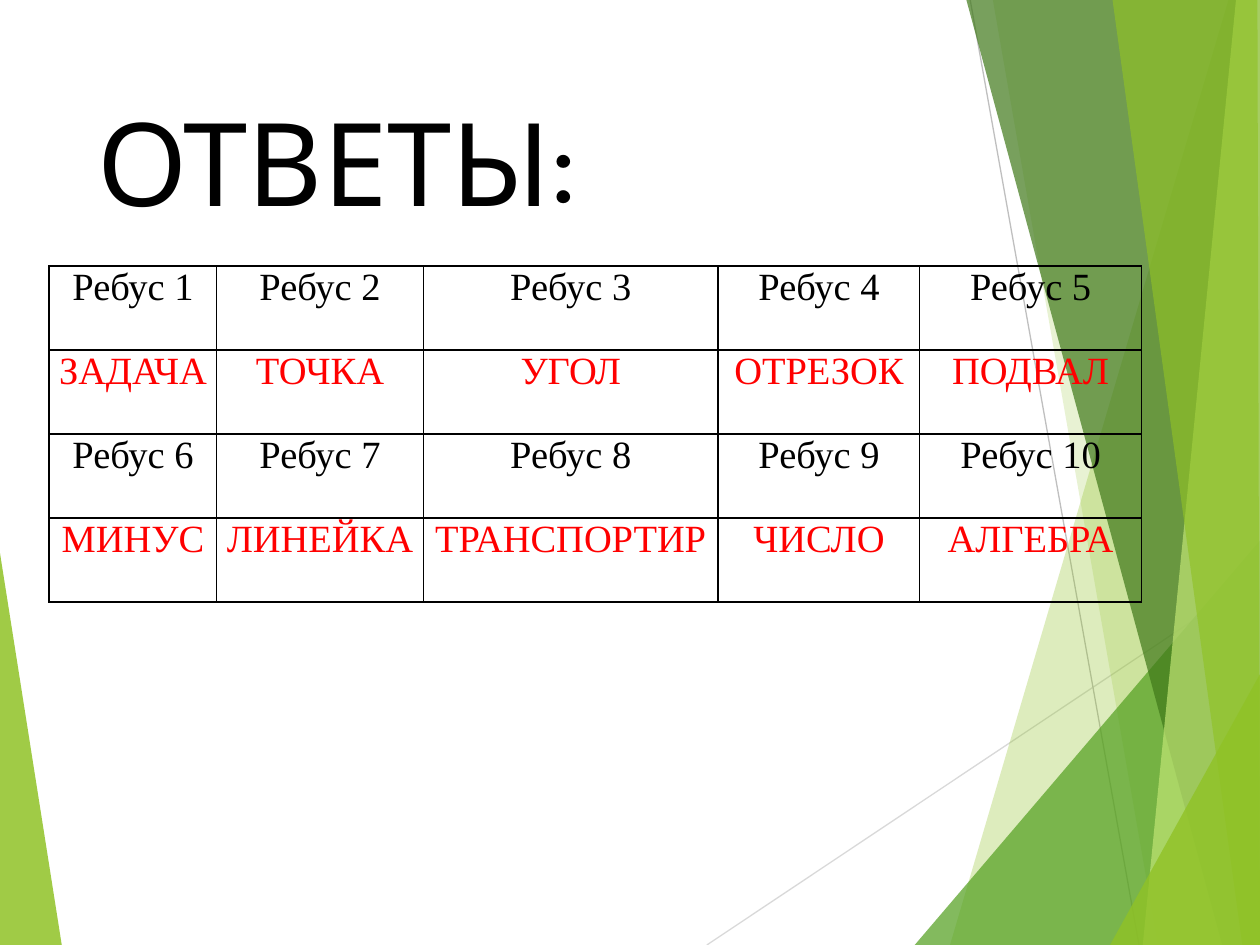
import lxml.etree
import pptx
import pptx.dml.color
import pptx.enum.shapes
import pptx.enum.text
import pptx.oxml.ns
import pptx.util

RGBColor = pptx.dml.color.RGBColor
qn = pptx.oxml.ns.qn
PP_ALIGN = pptx.enum.text.PP_ALIGN
MSO_ANCHOR = pptx.enum.text.MSO_ANCHOR

BLACK = RGBColor(0x00, 0x00, 0x00)
RED = RGBColor(0xFF, 0x00, 0x00)
LIME = RGBColor(0x90, 0xC2, 0x26)
GREEN = RGBColor(0x54, 0xA0, 0x21)
FOREST = RGBColor(0x3F, 0x78, 0x19)
PALE_LIME = RGBColor(0xC0, 0xE4, 0x74)
LIGHT_GREY = RGBColor(0xD9, 0xD9, 0xD9)
GREY = RGBColor(0xBF, 0xBF, 0xBF)

COLS, ROWS = 100, 75

RAYS = [
    ((56.1, 75), (100, 45.7), LIGHT_GREY),
    ((77, 0), (90.4, 75), GREY),
]
FACETS = [
    ([(0, 43.9), (4.9, 75), (0, 75)], LIME, 85),
    ([(97.5, 0), (75.4, 75), (100, 75), (100, 0)], LIME, 30),
    ([(78.8, 0), (91.9, 75), (100, 75), (100, 0)], LIME, 20),
    ([(72.6, 75), (100, 42.9), (100, 75)], GREEN, 72),
    ([(76.7, 0), (97, 75), (100, 75), (100, 0)], FOREST, 70),
    ([(98.1, 0), (90.7, 75), (100, 75), (100, 0)], PALE_LIME, 70),
    ([(88.3, 0), (98.6, 75), (100, 75), (99.8, 0)], LIME, 65),
    ([(88.1, 75), (100, 53.5), (100, 75)], LIME, 80),
]
ANSWERS = [
    ["ЗАДАЧА", "ТОЧКА", "УГОЛ", "ОТРЕЗОК", "ПОДВАЛ"],
    ["МИНУС", "ЛИНЕЙКА", "ТРАНСПОРТИР", "ЧИСЛО", "АЛГЕБРА"],
]


class Deck:
    title_font = {"name": "Karla", "size": pptx.util.Pt(66)}
    cell_font = {"name": "Times New Roman", "size": pptx.util.Pt(22)}
    cell_format = {
        "margin_left": pptx.util.Inches(0.07),
        "margin_right": pptx.util.Inches(0.07),
        "margin_top": 0,
        "margin_bottom": 0,
        "vertical_anchor": MSO_ANCHOR.TOP,
    }

    def __init__(self):
        self.prs = pptx.Presentation()
        self.prs.slide_width = pptx.util.Inches(10)
        self.prs.slide_height = pptx.util.Inches(7.5)
        self.s = self.prs.slides.add_slide(self.prs.slide_layouts[5])

    def x(self, col):
        return round(self.prs.slide_width * col / COLS)

    def y(self, row):
        return round(self.prs.slide_height * row / ROWS)

    def apply(self, obj, values):
        for key, value in values.items():
            setattr(obj, key, value)

    def text(self, p, text, font, color, align):
        r = p.add_run()
        r.text = text
        p.alignment = align
        self.apply(r.font, font)
        r.font.color.rgb = color

    def ray(self, start, end, color):
        sp = self.s.shapes.add_connector(
            pptx.enum.shapes.MSO_CONNECTOR.STRAIGHT,
            self.x(start[0]), self.y(start[1]), self.x(end[0]), self.y(end[1]))
        sp.line.color.rgb = color
        sp.line.width = pptx.util.Pt(0.75)
        lxml.etree.SubElement(sp._element.spPr, qn("a:effectLst"))

    def facet(self, points, color, opacity):
        pts = [(self.x(col), self.y(row)) for col, row in points]
        fb = self.s.shapes.build_freeform(*pts[0], scale=1.0)
        fb.add_line_segments(pts[1:], close=True)
        sp = fb.convert_to_shape()
        sp.shadow.inherit = False
        sp.fill.solid()
        sp.fill.fore_color.rgb = color
        sp.line.fill.background()
        clr = sp._element.spPr.find(qn("a:solidFill"))[0]
        lxml.etree.SubElement(clr, qn("a:alpha"), val=str(opacity * 1000))

    def title(self, text, left, top, width, height):
        sp = self.s.shapes.title
        self.apply(sp, {"left": self.x(left), "top": self.y(top),
                        "width": self.x(width), "height": self.y(height)})
        tf = sp.text_frame
        self.apply(tf, {"vertical_anchor": MSO_ANCHOR.TOP, "word_wrap": True,
                        "auto_size": pptx.enum.text.MSO_AUTO_SIZE.NONE})
        self.text(tf.paragraphs[0], text, self.title_font, BLACK, PP_ALIGN.LEFT)

    def borders(self, cell):
        tc_pr = cell._tc.get_or_add_tcPr()
        for side in ("lnL", "lnR", "lnT", "lnB"):
            ln = lxml.etree.SubElement(tc_pr, qn(f"a:{side}"), w=str(pptx.util.Pt(1)))
            fill = lxml.etree.SubElement(ln, qn("a:solidFill"))
            lxml.etree.SubElement(fill, qn("a:srgbClr"), val=str(BLACK))

    def table(self, rows, left, top, widths, row_height):
        table = self.s.shapes.add_table(
            len(rows), len(widths), self.x(left), self.y(top),
            self.x(sum(widths)), self.y(row_height * len(rows))).table
        self.apply(table, {"first_row": False, "horz_banding": False})
        for column, width in zip(table.columns, widths):
            column.width = self.x(width)
        for i, (texts, color) in enumerate(rows):
            table.rows[i].height = self.y(row_height)
            for j, text in enumerate(texts):
                cell = table.cell(i, j)
                self.apply(cell, self.cell_format)
                self.borders(cell)
                cell.fill.background()
                self.text(cell.text_frame.paragraphs[0], text,
                          self.cell_font, color, PP_ALIGN.CENTER)


def main():
    deck = Deck()
    for ray in RAYS:
        deck.ray(*ray)
    for facet in FACETS:
        deck.facet(*facet)
    deck.title("ОТВЕТЫ:", 6.7, 6.7, 69.4, 14.4)
    rows = []
    for i, answers in enumerate(ANSWERS):
        first = i * len(answers) + 1
        labels = [f"Ребус {first + j}" for j in range(len(answers))]
        rows += [(labels, BLACK), (answers, RED)]
    deck.table(rows, 3.9, 21.1, [13.3, 16.4, 23.4, 16, 17.6], 6.67)
    deck.prs.save("out.pptx")


if __name__ == "__main__":
    main()
